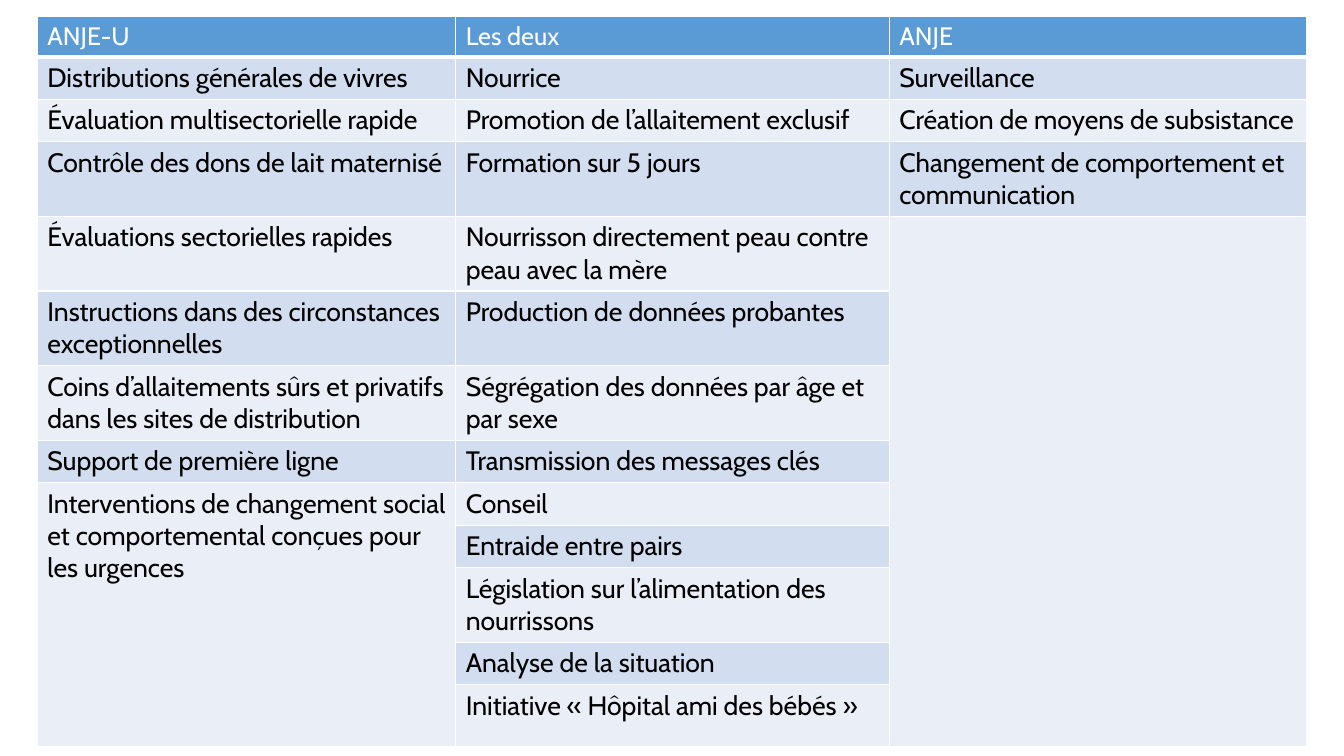
"""Build a slide with a table comparing ANJE-U and ANJE interventions."""
from lxml import etree
from pptx import Presentation
from pptx.dml.color import RGBColor
from pptx.oxml import ns
from pptx.util import Inches, Pt

COLORS = {
    "header": "5B9BD5",
    "dark_band": "D2DEEF",
    "light_band": "EAEFF7",
    "white": "FFFFFF",
    "black": "000000",
}
COLUMN_WIDTHS = [4.15, 4.3, 4.14]
ONE_LINE, TWO_LINES = 0.4, 0.71
ROW_HEIGHTS = [0.38, ONE_LINE, ONE_LINE, *[TWO_LINES] * 4, *[ONE_LINE] * 3,
               TWO_LINES, ONE_LINE, 0.62]
COLUMNS = [
    [
        "ANJE-U",
        "Distributions générales de vivres",
        "Évaluation multisectorielle rapide",
        "Contrôle des dons de lait maternisé",
        "Évaluations sectorielles rapides",
        "Instructions dans des circonstances exceptionnelles",
        "Coins d’allaitements sûrs et privatifs dans les sites de distribution",
        "Support de première ligne",
        "Interventions de changement social et comportemental conçues pour les urgences",
    ],
    [
        "Les deux",
        "Nourrice",
        "Promotion de l’allaitement exclusif",
        "Formation sur 5 jours",
        "Nourrisson directement peau contre peau avec la mère",
        "Production de données probantes",
        "Ségrégation des données par âge et par sexe",
        "Transmission des messages clés",
        "Conseil",
        "Entraide entre pairs",
        "Législation sur l’alimentation des nourrissons",
        "Analyse de la situation",
        "Initiative « Hôpital ami des bébés »",
    ],
    [
        "ANJE",
        "Surveillance",
        "Création de moyens de subsistance",
        "Changement de comportement et communication",
    ],
]


def set_borders(cell, bottom_width):
    properties = cell._tc.get_or_add_tcPr()
    widths = {"a:lnL": 1, "a:lnR": 1, "a:lnT": 1, "a:lnB": bottom_width}
    for position, (tag, width) in enumerate(widths.items()):
        line = etree.Element(ns.qn(tag), w=str(Pt(width)))
        fill = etree.SubElement(line, ns.qn("a:solidFill"))
        etree.SubElement(fill, ns.qn("a:srgbClr"), val=COLORS["white"])
        properties.insert(position, line)


presentation = Presentation()
presentation.slide_width = Inches(13.33)
presentation.slide_height = Inches(7.5)
slide = presentation.slides.add_slide(presentation.slide_layouts[6])

table = slide.shapes.add_table(
    len(ROW_HEIGHTS), len(COLUMNS), Inches(0.37), Inches(0.16),
    Inches(sum(COLUMN_WIDTHS)), Inches(sum(ROW_HEIGHTS))).table
for column, width in zip(table.columns, COLUMN_WIDTHS):
    column.width = Inches(width)
for row, height in zip(table.rows, ROW_HEIGHTS):
    row.height = Inches(height)

for column_index, entries in enumerate(COLUMNS):
    for row_index in range(len(ROW_HEIGHTS)):
        is_header = row_index == 0
        band = "header" if is_header else "dark_band" if row_index % 2 else "light_band"
        cell = table.cell(row_index, column_index)
        cell.fill.solid()
        cell.fill.fore_color.rgb = RGBColor.from_string(COLORS[band])
        set_borders(cell, 3 if is_header else 1)
        if row_index < len(entries):
            cell.text = entries[row_index]
        font = cell.text_frame.paragraphs[0].font
        font.name = "Cabin"
        font.size = Pt(18 if is_header else 19)
        font.bold = False
        font.color.rgb = RGBColor.from_string(COLORS["white" if is_header else "black"])

last_row = len(ROW_HEIGHTS) - 1
for first_row, column_index in [(8, 0), (4, 2)]:
    table.cell(first_row, column_index).merge(table.cell(last_row, column_index))

presentation.save("out.pptx")
